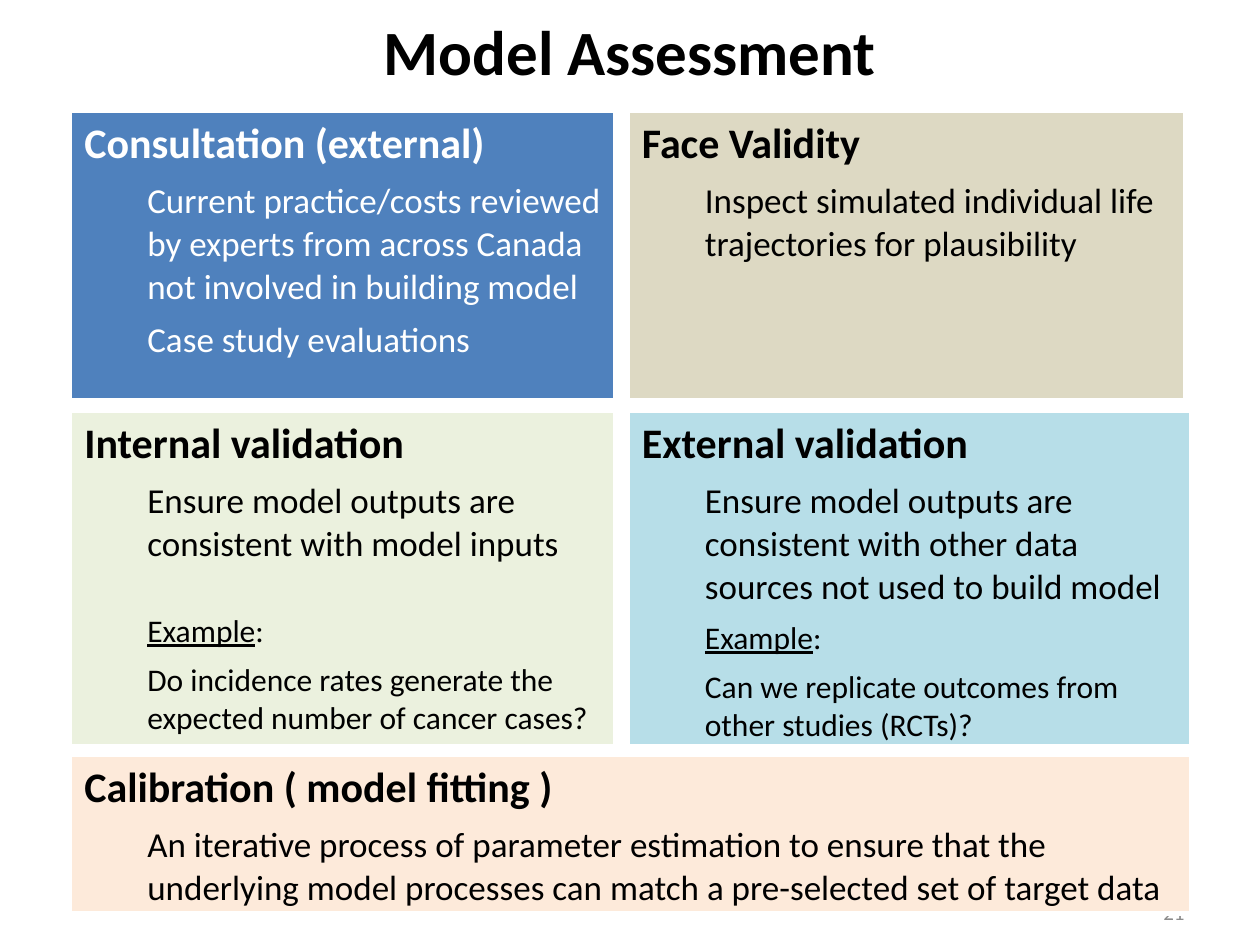
"""Build the Model Assessment slide: a title over five filled panels."""
from lxml import etree
from pptx import Presentation
from pptx.dml.color import RGBColor
from pptx.enum.text import MSO_ANCHOR, PP_ALIGN
from pptx.oxml.ns import qn
from pptx.util import Pt

LEFT, CENTER, RIGHT = PP_ALIGN.LEFT, PP_ALIGN.CENTER, PP_ALIGN.RIGHT
MIDDLE = MSO_ANCHOR.MIDDLE
FONT = "Calibri"
BLACK, WHITE, GREY = "000000", "FFFFFF", "8C8C8C"
BORDERS = {"a:lnL": 1, "a:lnR": 1, "a:lnT": 1, "a:lnB": 3}
LEFT_EDGE, RIGHT_COLUMN = 41, 359.6
TOP_ROW, MIDDLE_ROW, BOTTOM_ROW = 64.1, 235.4, 432
INDENT, EXAMPLE_GAP = 36, 20.5

TITLE = "Model Assessment"
PAGE_NUMBER = "21"
PANELS = [
    {"box": (LEFT_EDGE, TOP_ROW, 309.6, 164.9), "fill": "4F81BD", "color": WHITE,
     "heading": "Consultation (external)",
     "points": ["Current practice/costs reviewed by experts from across Canada "
                "not involved in building model",
                "Case study evaluations"]},
    {"box": (RIGHT_COLUMN, TOP_ROW, 316.8, 164.9), "fill": "DDD9C3",
     "heading": "Face Validity",
     "points": ["Inspect simulated individual life trajectories for plausibility"]},
    {"box": (LEFT_EDGE, MIDDLE_ROW, 309.6, 191.2), "fill": "EBF1DE",
     "heading": "Internal validation",
     "points": ["Ensure model outputs are consistent with model inputs"],
     "example": "Do incidence rates generate the expected number of cancer cases?",
     "gap": EXAMPLE_GAP},
    {"box": (RIGHT_COLUMN, MIDDLE_ROW, 320.4, 191.2), "fill": "B7DEE8",
     "heading": "External validation",
     "points": ["Ensure model outputs are consistent with other data sources "
                "not used to build model"],
     "example": "Can we replicate outcomes from other studies (RCTs)?"},
    {"box": (LEFT_EDGE, BOTTOM_ROW, 639, 90), "fill": "FDEADA",
     "heading": "Calibration ( model fitting )",
     "points": ["An iterative process of parameter estimation to ensure that the "
                "underlying model processes can match a pre-selected set of target data"]},
]


def rgb(value):
    """Return the colour for a hex string."""
    return RGBColor.from_string(value)


def write(paragraph, text, size=20, color=BLACK, bold=False, underline=False,
          align=LEFT, indent=0, before=0, after=0):
    """Add a formatted run and set the format of its paragraph."""
    paragraph.alignment = align
    paragraph.space_before, paragraph.space_after = Pt(before), Pt(after)
    if indent:
        paragraph.level = 1
        properties = paragraph._p.get_or_add_pPr()
        properties.set("marL", str(Pt(indent)))
        properties.set("indent", "0")
    run = paragraph.add_run()
    run.text = text
    font = run.font
    font.name, font.size, font.bold, font.underline = FONT, Pt(size), bold, underline
    font.color.rgb = rgb(color)


def add_label(slide, box, text, **style):
    """Add a vertically centred text box."""
    frame = slide.shapes.add_textbox(*map(Pt, box)).text_frame
    frame.word_wrap = True
    frame.vertical_anchor = MIDDLE
    write(frame.paragraphs[0], text, **style)


def add_borders(cell):
    """Give a cell its white borders."""
    properties = cell._tc.get_or_add_tcPr()
    for position, (tag, width) in enumerate(BORDERS.items()):
        line = etree.Element(qn(tag), w=str(Pt(width)))
        fill = etree.SubElement(line, qn("a:solidFill"))
        etree.SubElement(fill, qn("a:srgbClr"), val=WHITE)
        properties.insert(position, line)


def add_panel(slide, panel):
    """Add a one-cell table with a heading, its points and an optional example."""
    table = slide.shapes.add_table(1, 1, *map(Pt, panel["box"])).table
    cell = table.cell(0, 0)
    cell.fill.solid()
    cell.fill.fore_color.rgb = rgb(panel["fill"])
    add_borders(cell)

    frame = cell.text_frame
    color = panel.get("color", BLACK)
    body = {"color": color, "indent": INDENT, "after": 6}
    write(frame.paragraphs[0], panel["heading"], size=24, bold=True, color=color, after=6)
    for point in panel["points"]:
        write(frame.add_paragraph(), point, **body)
    if "example" in panel:
        body.update(size=18)
        label = frame.add_paragraph()
        gap = panel.get("gap", 0)
        write(label, "Example", underline=True, before=gap, **body)
        write(label, ":", before=gap, **body)
        write(frame.add_paragraph(), panel["example"], **body)


def main():
    """Assemble and save the slide."""
    deck = Presentation()
    deck.slide_width, deck.slide_height = Pt(720), Pt(540)
    slide = deck.slides.add_slide(deck.slide_layouts[6])
    add_label(slide, (36, 6.5, 648, 44.6), TITLE, size=36, bold=True, align=CENTER)
    add_label(slide, (516, 507, 168, 28.8), PAGE_NUMBER, size=12, color=GREY, align=RIGHT)
    for panel in PANELS:
        add_panel(slide, panel)
    deck.save("out.pptx")


if __name__ == "__main__":
    main()
